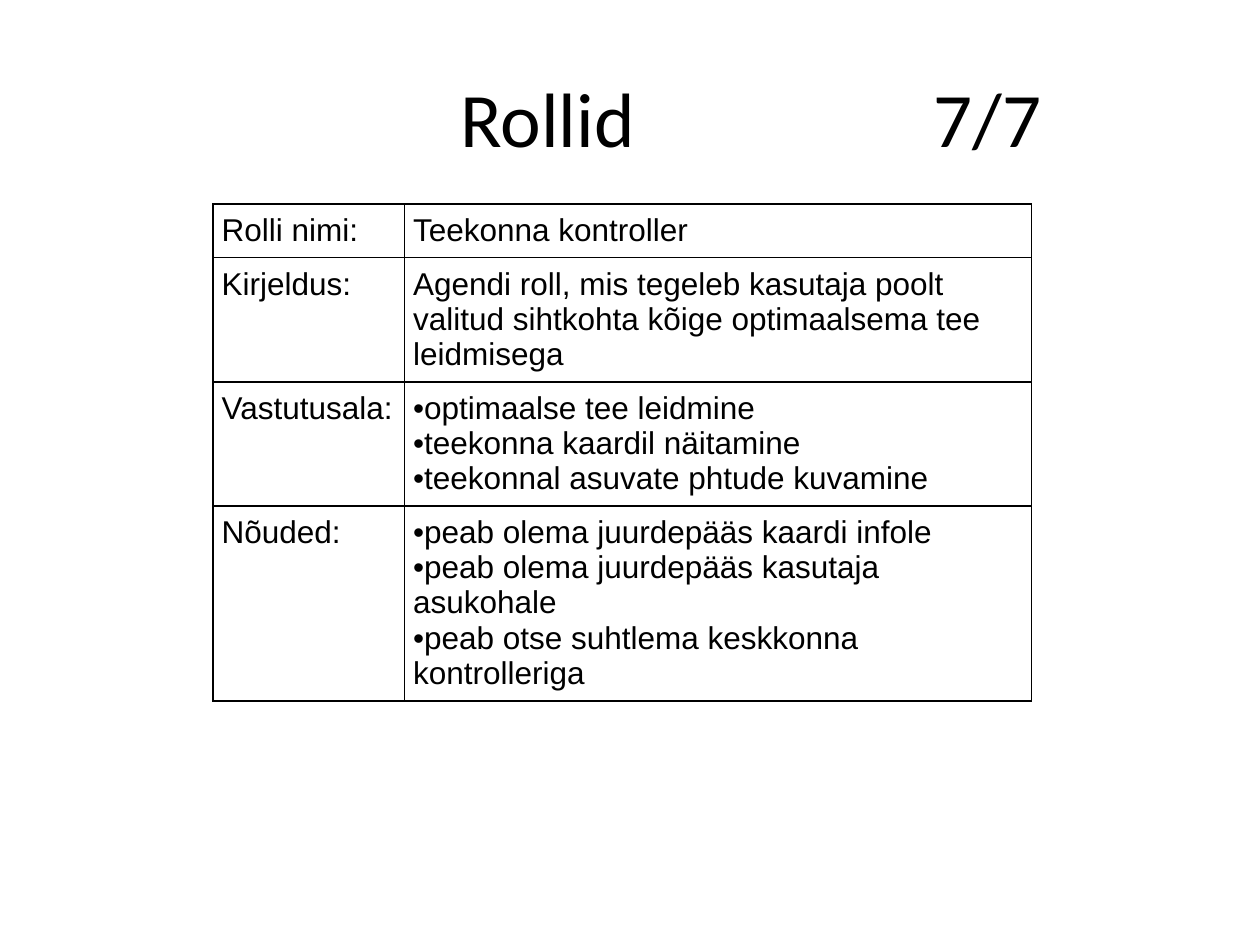
from lxml.etree import SubElement
from pptx import Presentation
from pptx.dml.color import RGBColor
from pptx.enum.text import MSO_ANCHOR, PP_ALIGN
from pptx.oxml.ns import qn
from pptx.util import Pt

HEADING = ("Rollid", "7/7")
HEADING_STOPS = (220, 490.5)
ROLE = [
    ("Rolli nimi:", ["Teekonna kontroller"]),
    ("Kirjeldus:", ["Agendi roll, mis tegeleb kasutaja poolt valitud sihtkohta "
                    "kõige optimaalsema tee leidmisega"]),
    ("Vastutusala:", ["optimaalse tee leidmine",
                      "teekonna kaardil näitamine",
                      "teekonnal asuvate phtude kuvamine"]),
    ("Nõuded:", ["peab olema juurdepääs kaardi infole",
                 "peab olema juurdepääs kasutaja asukohale",
                 "peab otse suhtlema keskkonna kontrolleriga"]),
]
COLUMN_WIDTHS = (109.4, 358.6)
ROW_HEIGHTS = (30.8, 70.9, 70.9, 111.4)
TABLE_LEFT, TABLE_TOP = 121.7, 116.6
COLORS = {"ink": "000000"}
HEADING_FONT = {"name": "Calibri", "size": Pt(44), "bold": False}
CELL_FONT = {"name": "Arial", "size": Pt(18), "bold": False}
HEADING_BOX = {"left": Pt(36), "top": Pt(21.6), "width": Pt(648), "height": Pt(90)}
CELL_FORMAT = {"margin_left": Pt(5), "margin_right": Pt(5), "margin_top": Pt(5),
               "margin_bottom": Pt(5), "vertical_anchor": MSO_ANCHOR.TOP}


def apply(target, values):
    for attribute, value in values.items():
        setattr(target, attribute, value)


def style_font(paragraph, values):
    for run in paragraph.runs:
        apply(run.font, values)
        run.font.color.rgb = RGBColor.from_string(COLORS["ink"])


def add_bullet(paragraph):
    properties = paragraph._p.get_or_add_pPr()
    properties.set("marL", "0")
    properties.set("indent", "0")
    SubElement(properties, qn("a:buFont"), typeface="Arial")
    SubElement(properties, qn("a:buChar"), char="•")


def add_borders(cell):
    properties = cell._tc.get_or_add_tcPr()
    for side in ("lnL", "lnR", "lnT", "lnB"):
        border = SubElement(properties, qn(f"a:{side}"), w=str(Pt(0.75)))
        fill = SubElement(border, qn("a:solidFill"))
        SubElement(fill, qn("a:srgbClr"), val=COLORS["ink"])


def fill_cell(cell, lines):
    apply(cell, CELL_FORMAT)
    add_borders(cell)
    cell.fill.background()
    cell.text = "\n".join(lines)
    for paragraph in cell.text_frame.paragraphs:
        if len(lines) > 1:
            add_bullet(paragraph)
        style_font(paragraph, CELL_FONT)


def add_heading(slide):
    heading = slide.shapes.title
    apply(heading, HEADING_BOX)
    heading.text_frame.vertical_anchor = MSO_ANCHOR.MIDDLE
    paragraph = heading.text_frame.paragraphs[0]
    paragraph.add_run().text = "".join(f"\t{part}" for part in HEADING)
    paragraph.alignment = PP_ALIGN.LEFT
    stops = SubElement(paragraph._p.get_or_add_pPr(), qn("a:tabLst"))
    for stop in HEADING_STOPS:
        SubElement(stops, qn("a:tab"), pos=str(Pt(stop)), algn="l")
    style_font(paragraph, HEADING_FONT)


def add_role_table(slide):
    role_table = slide.shapes.add_table(
        len(ROLE), len(COLUMN_WIDTHS), Pt(TABLE_LEFT), Pt(TABLE_TOP),
        Pt(sum(COLUMN_WIDTHS)), Pt(sum(ROW_HEIGHTS))).table
    apply(role_table, {"first_row": False, "horz_banding": False})
    for column, width in zip(role_table.columns, COLUMN_WIDTHS):
        column.width = Pt(width)
    for row, height, (label, details) in zip(role_table.rows, ROW_HEIGHTS, ROLE):
        row.height = Pt(height)
        for cell, lines in zip(row.cells, ([label], details)):
            fill_cell(cell, lines)


def main():
    presentation = Presentation()
    apply(presentation, {"slide_width": Pt(720), "slide_height": Pt(540)})
    slide = presentation.slides.add_slide(presentation.slide_layouts[5])
    add_heading(slide)
    add_role_table(slide)
    presentation.save("out.pptx")


if __name__ == "__main__":
    main()
